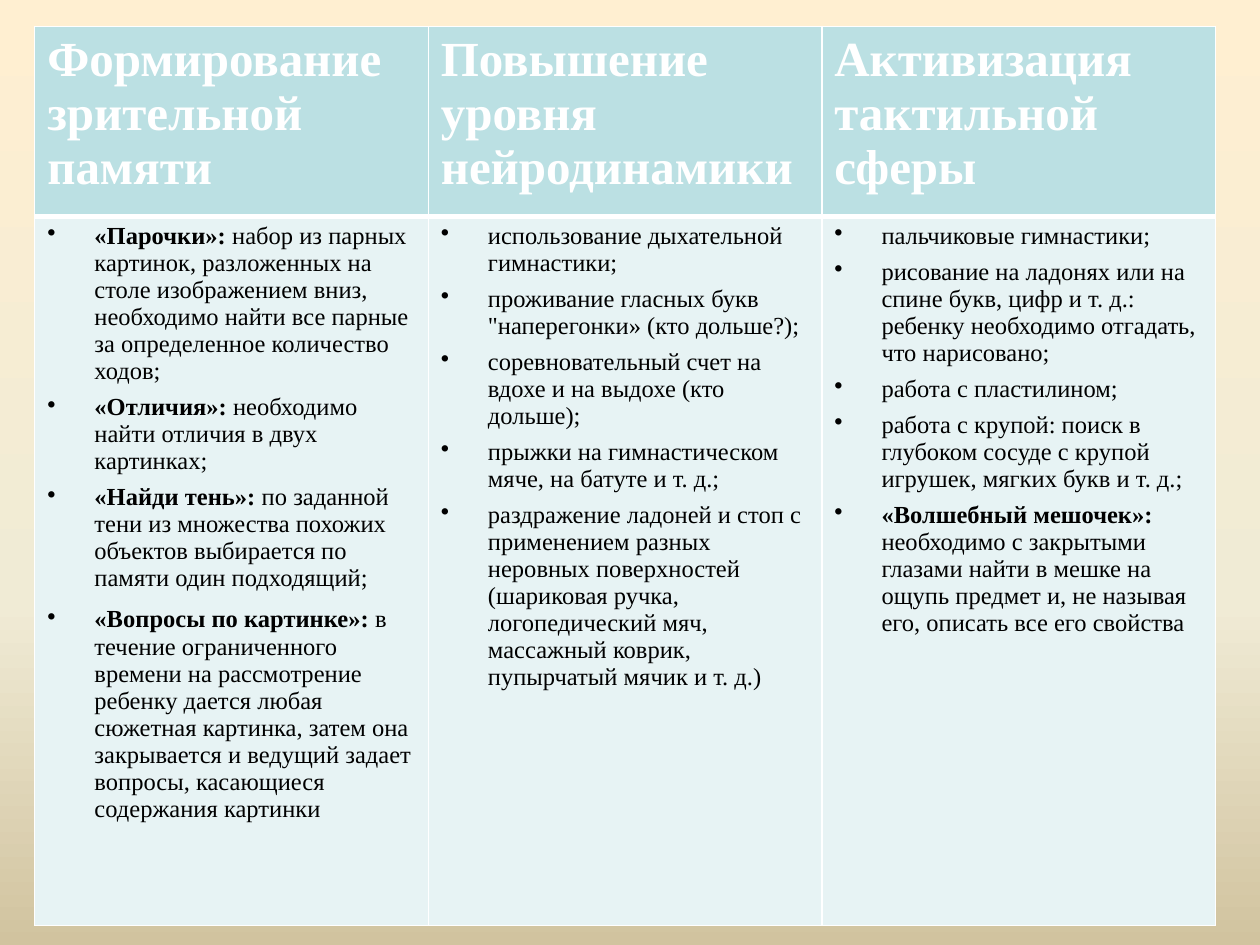
from copy import deepcopy
from dataclasses import dataclass

from lxml import etree
from pptx import Presentation
from pptx.dml.color import RGBColor
from pptx.oxml.ns import qn
from pptx.util import Cm, Pt

BLANK_LAYOUT = 6


@dataclass(frozen=True)
class Theme:
    font: str = "Times New Roman"
    head_size: int = 28
    body_size: int = 14
    head_text: str = "FFFFFF"
    body_text: str = "000000"
    head_fill: str = "BBE0E3"
    body_fill: str = "E7F3F4"
    border: str = "FFFFFF"
    background: tuple = ((0, "FFEFD1"), (0.64, "F0EBD5"), (1, "D1C39F"))


THEME = Theme()

# Each column: heading, then items of (bold lead, plain text)
COLUMNS = [
    ("Формирование зрительной памяти", [
        ("«Парочки»:", " набор из парных картинок, разложенных на столе изображением вниз, "
         "необходимо найти все парные за определенное количество ходов;"),
        ("«Отличия»:", " необходимо найти отличия в двух картинках;"),
        ("«Найди тень»:", " по заданной тени из множества похожих объектов выбирается "
         "по памяти один подходящий;"),
        ("«Вопросы по картинке»:", " в течение ограниченного времени на рассмотрение ребенку "
         "дается любая сюжетная картинка, затем она закрывается и ведущий задает вопросы, "
         "касающиеся содержания картинки"),
    ]),
    ("Повышение уровня нейродинамики", [
        ("", "использование дыхательной гимнастики;"),
        ("", "проживание гласных букв \"наперегонки» (кто дольше?);"),
        ("", "соревновательный счет на вдохе и на выдохе (кто дольше);"),
        ("", "прыжки на гимнастическом мяче, на батуте и т. д.;"),
        ("", "раздражение ладоней и стоп с применением разных неровных поверхностей "
         "(шариковая ручка, логопедический мяч, массажный коврик, пупырчатый мячик и т. д.)"),
    ]),
    ("Активизация тактильной сферы", [
        ("", "пальчиковые гимнастики;"),
        ("", "рисование на ладонях или на спине букв, цифр и т. д.: ребенку необходимо "
         "отгадать, что нарисовано;"),
        ("", "работа с пластилином;"),
        ("", "работа с крупой: поиск в глубоком сосуде с крупой игрушек, мягких букв и т. д.;"),
        ("«Волшебный мешочек»: ", "необходимо с закрытыми глазами найти в мешке на ощупь "
         "предмет и, не называя его, описать все его свойства"),
    ]),
]


def set_background(s):
    fill = s.background.fill
    fill.gradient()
    fill.gradient_angle = 270
    # The default gradient has two stops; the third is cloned from the last
    last = fill._fill._gradFill.gsLst[-1]
    last.addnext(deepcopy(last))
    for stop, (position, color) in zip(fill.gradient_stops, THEME.background):
        stop.position = position
        stop.color.rgb = RGBColor.from_string(color)


def set_font(p, size, color, bold=None):
    p.font.name, p.font.size, p.font.bold = THEME.font, Pt(size), bold
    p.font.color.rgb = RGBColor.from_string(color)


def style_cell(cell, color, bottom=1):
    cell.fill.solid()
    cell.fill.fore_color.rgb = RGBColor.from_string(color)
    tcPr = cell._tc.get_or_add_tcPr()
    widths = {"a:lnL": 1, "a:lnR": 1, "a:lnT": 1, "a:lnB": bottom}
    for i, (tag, width) in enumerate(widths.items()):
        ln = etree.Element(qn(tag), w=str(Pt(width)))
        solid = etree.SubElement(ln, qn("a:solidFill"))
        etree.SubElement(solid, qn("a:srgbClr"), val=THEME.border)
        tcPr.insert(i, ln)


def add_bullet(p):
    pPr = p._p.get_or_add_pPr()
    indent = Cm(0.95)
    pPr.set("marL", str(indent))
    pPr.set("indent", str(-indent))
    bullet = etree.Element(qn("a:buChar"), char="•")
    pPr.find(qn("a:defRPr")).addprevious(bullet)


def fill_items(cell, items):
    tf = cell.text_frame
    for i, (lead, text) in enumerate(items):
        p = tf.paragraphs[0] if i == 0 else tf.add_paragraph()
        set_font(p, THEME.body_size, THEME.body_text)
        p.space_before = Pt(8 if lead.startswith("«Вопросы") else 5)
        add_bullet(p)
        if lead:
            r = p.add_run()
            r.text, r.font.bold = lead, True
        p.add_run().text = text


def add_columns_table(s, left, top, width, head_height, body_height):
    table = s.shapes.add_table(2, len(COLUMNS), left, top, width,
                               head_height + body_height).table
    table.rows[0].height, table.rows[1].height = head_height, body_height
    for i, (heading, items) in enumerate(COLUMNS):
        # Heading
        head = table.cell(0, i)
        style_cell(head, THEME.head_fill, bottom=3)
        p = head.text_frame.paragraphs[0]
        p.text = heading
        set_font(p, THEME.head_size, THEME.head_text, bold=True)
        # Bulleted list
        body = table.cell(1, i)
        style_cell(body, THEME.body_fill)
        fill_items(body, items)


def main():
    prs = Presentation()
    prs.slide_width, prs.slide_height = Cm(25.4), Cm(19.05)
    s = prs.slides.add_slide(prs.slide_layouts[BLANK_LAYOUT])
    set_background(s)
    add_columns_table(s, Cm(0.7), Cm(0.53), Cm(23.8), Cm(3.83), Cm(14.3))
    prs.save("out.pptx")


if __name__ == "__main__":
    main()
